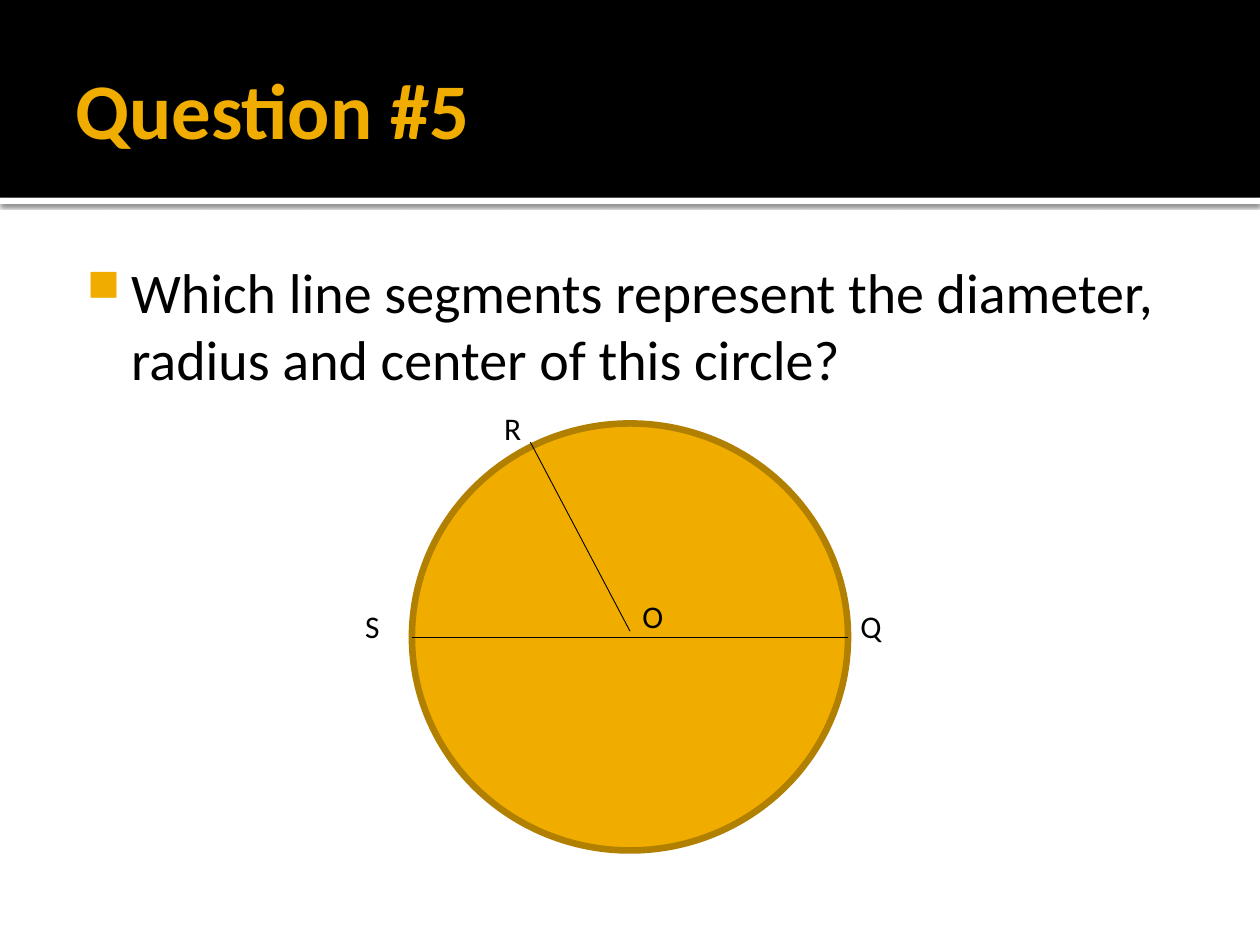
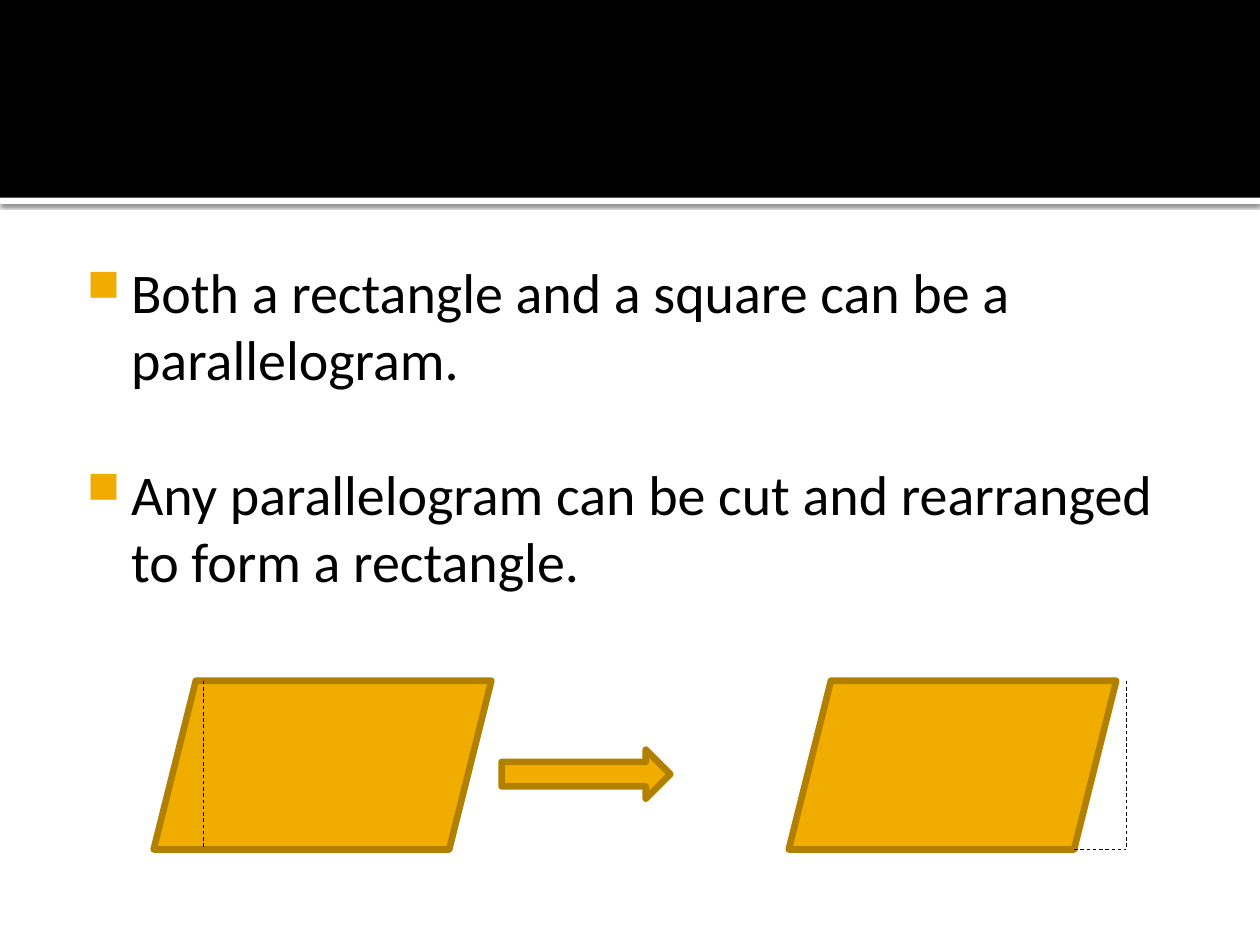
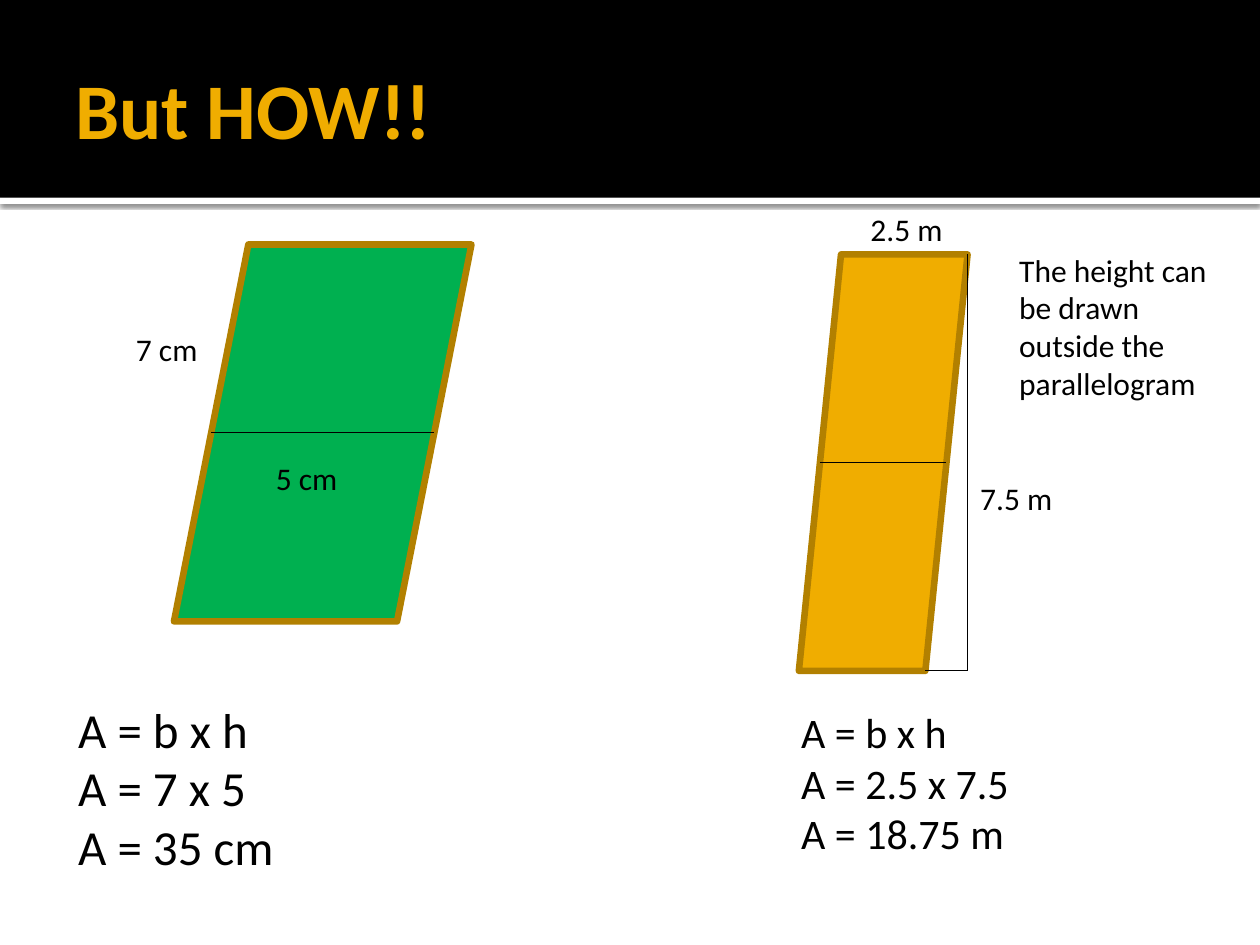
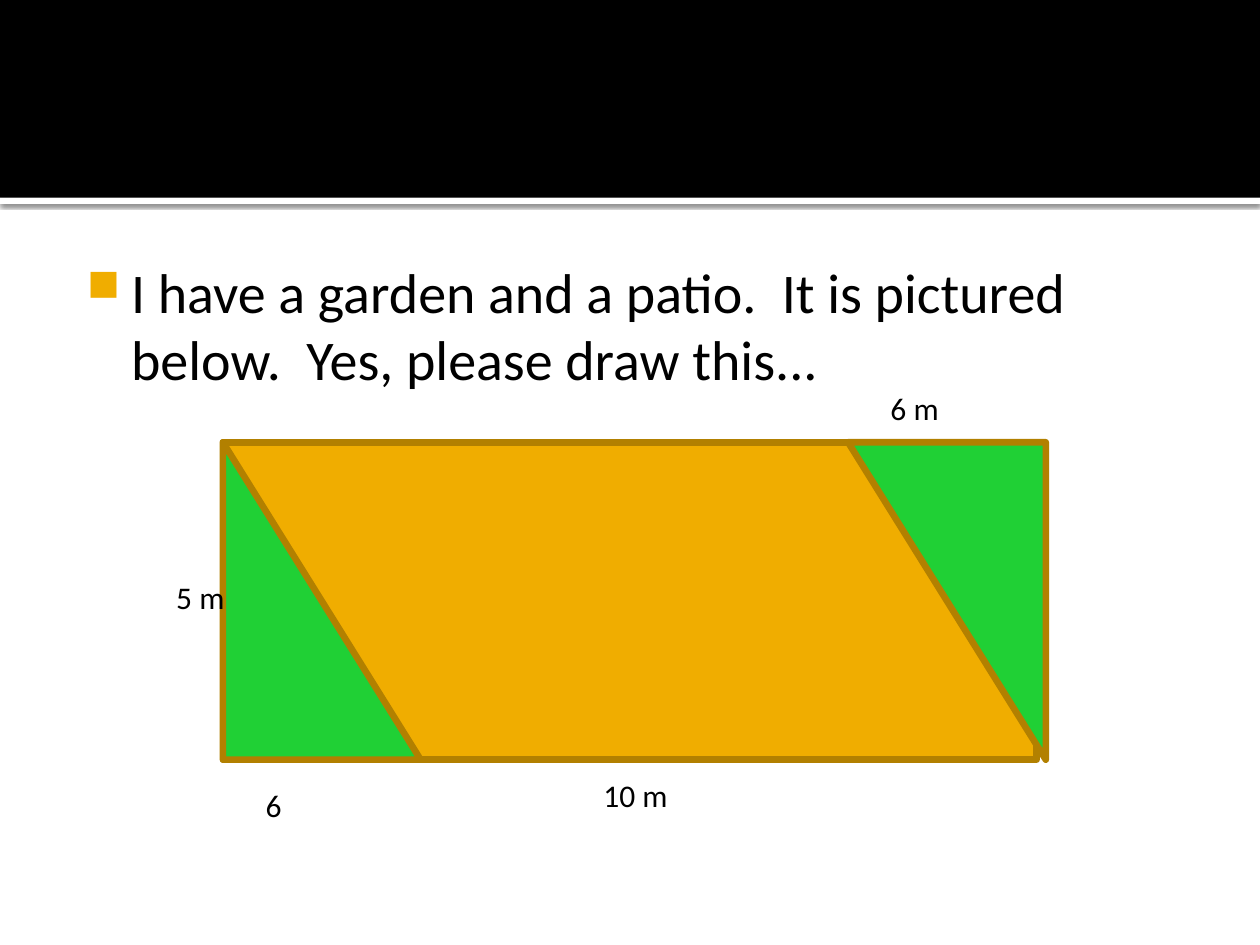
from dataclasses import dataclass

from lxml.etree import SubElement
from pptx import Presentation
from pptx.dml.color import RGBColor
from pptx.enum.dml import MSO_LINE
from pptx.enum.shapes import MSO_CONNECTOR, MSO_SHAPE
from pptx.enum.text import MSO_ANCHOR, MSO_AUTO_SIZE
from pptx.oxml.ns import qn
from pptx.shapes.autoshape import Shape
from pptx.slide import Slide
from pptx.text.text import TextFrame
from pptx.util import Pt

FONT = "Calibri"
BLACK, WHITE = "000000", "FFFFFF"
AMBER, BRONZE = "F0AD00", "B28000"
LEAF, GRASS = "00B050", "20D035"
SLIDE_WIDTH, SLIDE_HEIGHT = 720, 540
BAND_HEIGHT, STRIP_HEIGHT = 113, 3.6
BODY_LEFT, BODY_TOP, BODY_WIDTH, BODY_HEIGHT = 36, 139.7, 648, 364.3
BODY_INSETS = (4.3, 7.2, 7.2, 3.6)
LABEL_INSETS = (7.2, 3.6, 7.2, 3.6)
TEXT_INDENT, HANGING = 34.6, -25.2
BULLET_GAP = 39


@dataclass(frozen=True)
class Figure:
    kind: MSO_SHAPE
    left: float
    top: float
    width: float
    height: float
    fill: str = AMBER
    rotation: float = 0

    @property
    def right(self) -> float:
        return self.left + self.width

    @property
    def bottom(self) -> float:
        return self.top + self.height

    @property
    def middle(self) -> float:
        return self.top + self.height / 2

    @property
    def slant(self) -> float:
        """Sideways shift between the top and bottom of a parallelogram."""
        return min(self.width, self.height) / 4


@dataclass(frozen=True)
class Segment:
    x1: float
    y1: float
    x2: float
    y2: float
    dashed: bool = False


@dataclass(frozen=True)
class Label:
    text: str
    left: float
    top: float
    width: float
    height: float = 29
    size: float = 18


def color(value: str) -> RGBColor:
    return RGBColor.from_string(value)


def write(frame: TextFrame, lines: list[str], size: float,
          insets: tuple[float, float, float, float],
          ink: str = BLACK, bold: bool = False) -> None:
    frame.word_wrap = True
    (frame.margin_left, frame.margin_top,
     frame.margin_right, frame.margin_bottom) = map(Pt, insets)
    frame.text = "\n".join(lines)
    for paragraph in frame.paragraphs:
        for run in paragraph.runs:
            run.font.name = FONT
            run.font.size = Pt(size)
            run.font.bold = bold
            run.font.color.rgb = color(ink)


def add_frame(slide: Slide, left: float, top: float,
              width: float, height: float) -> TextFrame:
    return slide.shapes.add_textbox(
        Pt(left), Pt(top), Pt(width), Pt(height)).text_frame


def add_band(slide: Slide, top: float, height: float, fill: str) -> Shape:
    band = slide.shapes.add_shape(
        MSO_SHAPE.RECTANGLE, 0, Pt(top), Pt(SLIDE_WIDTH), Pt(height))
    band.shadow.inherit = False
    band.fill.solid()
    band.fill.fore_color.rgb = color(fill)
    band.line.fill.background()
    return band


def cast_shadow(shape: Shape) -> None:
    effects = shape.element.spPr.find(qn("a:effectLst"))
    shadow = SubElement(effects, qn("a:outerShdw"), blurRad=str(Pt(2.5)),
                        dist=str(Pt(0.8)), dir="5400000",
                        algn="tl", rotWithShape="0")
    ink = SubElement(shadow, qn("a:srgbClr"), val=BLACK)
    SubElement(ink, qn("a:alpha"), val="60000")


def add_page(deck: Presentation, title: str = "") -> Slide:
    slide = deck.slides.add_slide(deck.slide_layouts[6])
    cast_shadow(add_band(slide, BAND_HEIGHT, STRIP_HEIGHT, WHITE))
    add_band(slide, 0, BAND_HEIGHT, BLACK)
    if title:
        frame = add_frame(slide, BODY_LEFT, 12.2, BODY_WIDTH, 98.6)
        frame.vertical_anchor = MSO_ANCHOR.MIDDLE
        write(frame, [title], 45, (7.2, 3.6, 3.6, 3.6), AMBER, bold=True)
    return slide


def add_bullets(slide: Slide, *lines: str) -> None:
    frame = add_frame(slide, BODY_LEFT, BODY_TOP, BODY_WIDTH, BODY_HEIGHT)
    write(frame, list(lines), 32, BODY_INSETS)
    for index, paragraph in enumerate(frame.paragraphs):
        paragraph.space_before = Pt(BULLET_GAP if index else 0)
        props = paragraph._p.get_or_add_pPr()
        props.set("marL", str(Pt(TEXT_INDENT)))
        props.set("indent", str(Pt(HANGING)))
        tint = SubElement(props, qn("a:buClr"))
        SubElement(tint, qn("a:srgbClr"), val=AMBER)
        SubElement(props, qn("a:buSzPct"), val="80000")
        SubElement(props, qn("a:buChar"), char="■")


def add_figures(slide: Slide, *figures: Figure) -> None:
    for figure in figures:
        shape = slide.shapes.add_shape(
            figure.kind, Pt(figure.left), Pt(figure.top),
            Pt(figure.width), Pt(figure.height))
        shape.rotation = figure.rotation
        shape.shadow.inherit = False
        shape.fill.solid()
        shape.fill.fore_color.rgb = color(figure.fill)
        shape.line.color.rgb = color(BRONZE)
        shape.line.width = Pt(3.78)


def add_segments(slide: Slide, *segments: Segment) -> None:
    for segment in segments:
        connector = slide.shapes.add_connector(
            MSO_CONNECTOR.STRAIGHT, Pt(segment.x1), Pt(segment.y1),
            Pt(segment.x2), Pt(segment.y2))
        connector.line.color.rgb = color(BLACK)
        connector.line.width = Pt(0.5)
        if segment.dashed:
            connector.line.dash_style = MSO_LINE.DASH
        SubElement(connector.element.spPr, qn("a:effectLst"))


def add_labels(slide: Slide, *labels: Label) -> None:
    for label in labels:
        frame = add_frame(slide, label.left, label.top, label.width, label.height)
        write(frame, label.text.split("\n"), label.size, LABEL_INSETS)
        frame.auto_size = MSO_AUTO_SIZE.SHAPE_TO_FIT_TEXT


def midline(figure: Figure) -> Segment:
    """Horizontal line between the slanted sides of a parallelogram."""
    inset = figure.slant / 2
    return Segment(figure.left + inset, figure.middle,
                   figure.right - inset, figure.middle)


def add_circle_question(deck: Presentation) -> None:
    slide = add_page(deck, "Question #5")
    add_bullets(slide, "Which line segments represent the diameter, "
                       "radius and center of this circle?")
    circle = Figure(MSO_SHAPE.OVAL, 235.4, 242, 249.2, 244)
    add_figures(slide, circle)
    add_segments(slide,
                 Segment(circle.left, circle.middle, circle.right, circle.middle),
                 Segment(303.1, 252.7, 360, 360.7))
    add_labels(slide,
               Label("O", 360, 337.7, 34),
               Label("R", 281, 230.4, 62.6),
               Label("S", 201.6, 343.4, 45.4),
               Label("Q", 484.6, 343.4, 73.4))


def add_rearrangement(deck: Presentation) -> None:
    slide = add_page(deck)
    add_bullets(slide, "Both a rectangle and a square can be a parallelogram.",
                "Any parallelogram can be cut and rearranged to form a rectangle.")
    before = Figure(MSO_SHAPE.PARALLELOGRAM, 87.8, 389, 193, 96.4)
    after = Figure(MSO_SHAPE.PARALLELOGRAM, 450.7, 389, 187.2, 96.4)
    arrow = Figure(MSO_SHAPE.RIGHT_ARROW, 286.6, 428.4, 96.4, 28)
    add_figures(slide, before, arrow, after)
    cut, moved_edge = 116, 643.7
    add_segments(slide,
                 Segment(cut, before.top, cut, before.bottom, True),
                 Segment(moved_edge, after.top, moved_edge, after.bottom, True),
                 Segment(after.right - after.slant, after.bottom,
                         moved_edge, after.bottom, True))


def add_area_examples(deck: Presentation) -> None:
    slide = add_page(deck, "But HOW!!")
    working = add_frame(slide, 31, 157, BODY_WIDTH, BODY_HEIGHT)
    working.vertical_anchor = MSO_ANCHOR.BOTTOM
    write(working, ["A = b x h", "A = 7 x 5", "A = 35 cm"], 28,
          (TEXT_INDENT + HANGING + 4.3, 7.2, 7.2, 21))
    wide = Figure(MSO_SHAPE.PARALLELOGRAM, 99.4, 139.7, 170, 215.4, LEAF)
    tall = Figure(MSO_SHAPE.PARALLELOGRAM, 456.5, 145.4, 96.4, 238)
    add_figures(slide, wide, tall)
    add_segments(slide, midline(wide), midline(tall),
                 Segment(tall.right, tall.top, tall.right, tall.bottom),
                 Segment(tall.right, tall.bottom,
                         tall.right - tall.slant, tall.bottom))
    add_labels(slide,
               Label("5 cm", 150.5, 258.5, 73.4),
               Label("7 cm", 70.6, 185, 62.6),
               Label("The height can be drawn outside the parallelogram",
                     575.3, 139.7, 130.3, 94.3),
               Label("A = b x h\nA = 2.5 x 7.5\nA = 18.75 m",
                     450.7, 400.3, 170, 94.3, 24),
               Label("2.5 m", 490.3, 116.6, 57),
               Label("7.5 m", 553, 270, 108))


def add_garden(deck: Presentation) -> None:
    slide = add_page(deck)
    add_bullets(slide, "I have a garden and a patio.  It is pictured below.  "
                       "Yes, please draw this...")
    top, height, bed_width = 252.7, 181.4, 113
    add_figures(slide,
                Figure(MSO_SHAPE.RECTANGLE, 127.4, top, 465, height),
                Figure(MSO_SHAPE.RIGHT_TRIANGLE, 127.4, top, bed_width, height, GRASS),
                Figure(MSO_SHAPE.RIGHT_TRIANGLE, 484.6, top, bed_width, height,
                       GRASS, 180))
    add_labels(slide,
               Label("6", 144.7, 445.7, 85),
               Label("10 m", 337.7, 440, 124.6),
               Label("5 m", 93.6, 326.9, 118.8),
               Label("6 m", 501.8, 218.9, 96.5))


def main() -> None:
    deck = Presentation()
    deck.slide_width, deck.slide_height = Pt(SLIDE_WIDTH), Pt(SLIDE_HEIGHT)
    add_circle_question(deck)
    add_rearrangement(deck)
    add_area_examples(deck)
    add_garden(deck)
    deck.save("out.pptx")


if __name__ == "__main__":
    main()
